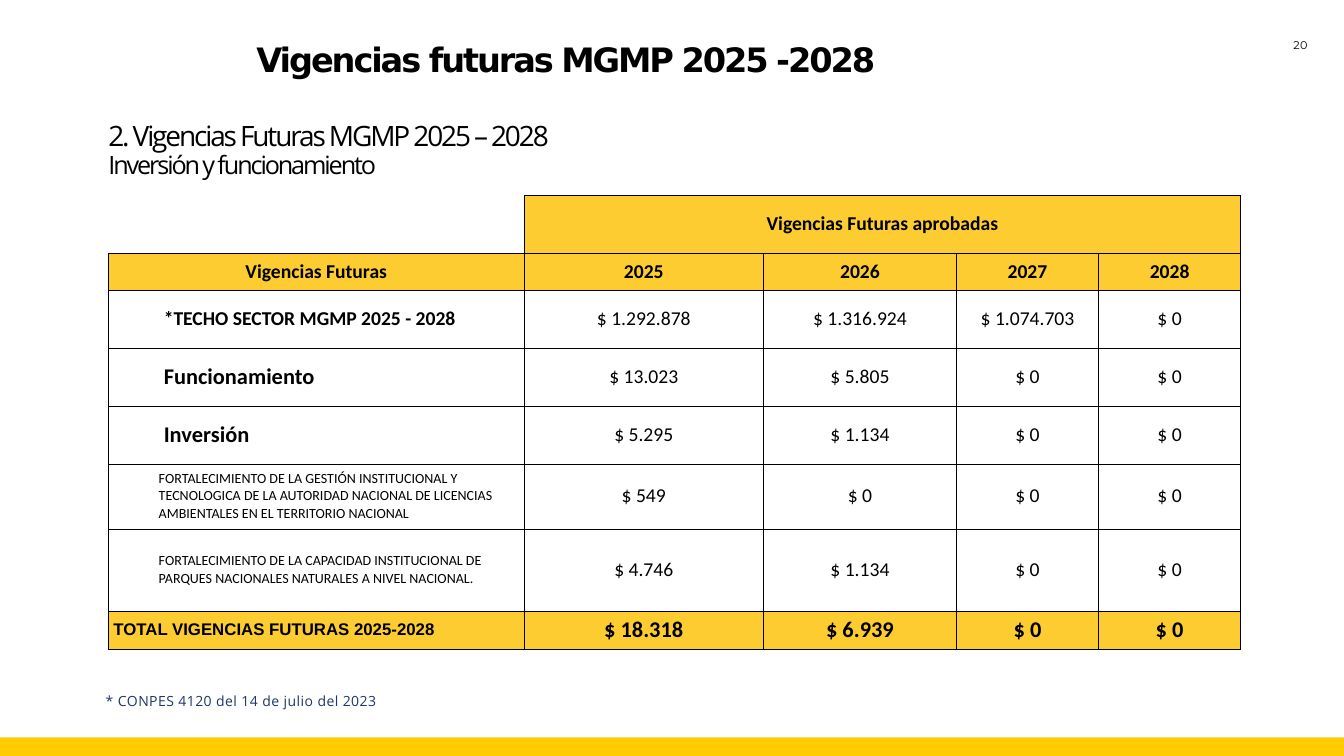
from dataclasses import dataclass

from lxml.etree import SubElement
from pptx import Presentation
from pptx.dml.color import RGBColor
from pptx.enum.shapes import MSO_SHAPE as Shape
from pptx.enum.text import MSO_ANCHOR as Anchor, MSO_AUTO_SIZE as AutoSize, PP_ALIGN as Align
from pptx.oxml.ns import qn
from pptx.util import Inches, Pt


@dataclass(frozen=True)
class Theme:
    black: str = "000000"
    navy: str = "203764"
    gold: str = "FCCC31"
    band: str = "FFCC01"
    heading_font: str = "DejaVu Sans"
    text_font: str = "Open Sans"
    number_font: str = "Montserrat"
    table_font: str = "Calibri"
    total_font: str = "Arial"
    heading: int = 48
    title: int = 40
    subtitle: int = 36
    strong: int = 32
    table: int = 28
    total: int = 24
    small: int = 20
    number: int = 16
    border: float = 0.5


class SlideBuilder:
    """Holds the theme and the current slide, and draws each kind of element."""

    def __init__(self, slide, theme):
        self.slide = slide
        self.theme = theme

    def style(self, font, name, size, color=None, bold=False):
        font.name, font.size, font.bold = name, Pt(size), bold
        font.color.rgb = RGBColor.from_string(color or self.theme.black)

    def space_letters(self, para, points):
        for run in para.runs:
            run.font._element.set("spc", str(round(points * 100)))

    def band(self, left, top, width, height, color):
        bar = self.slide.shapes.add_shape(
            Shape.RECTANGLE, Inches(left), Inches(top), Inches(width), Inches(height))
        bar.shadow.inherit = False
        bar.fill.solid()
        bar.fill.fore_color.rgb = RGBColor.from_string(color)
        bar.line.fill.background()

    def set_frame(self, frame, anchor=Anchor.TOP, margin=None):
        frame.word_wrap = True
        frame.auto_size = AutoSize.NONE
        frame.vertical_anchor = anchor
        if margin is not None:
            frame.margin_left = frame.margin_right = Inches(margin)
            frame.margin_top = frame.margin_bottom = Inches(margin)

    def text(self, place, words, font, size, color=None, bold=False, align=Align.LEFT,
             spacing=1.5, letters=0.6, anchor=Anchor.TOP, margin=None):
        box = self.slide.shapes.add_textbox(*map(Inches, place))
        self.set_frame(box.text_frame, anchor, margin)
        para = box.text_frame.paragraphs[0]
        para.text = words
        para.alignment, para.line_spacing = align, spacing
        self.style(para.font, font, size, color, bold)
        self.space_letters(para, letters)

    def title(self, place, first, second):
        theme, box = self.theme, self.slide.shapes.title
        box.left, box.top, box.width, box.height = map(Inches, place)
        self.set_frame(box.text_frame, margin=0)
        para = box.text_frame.paragraphs[0]
        para.alignment, para.line_spacing = Align.LEFT, 0.9
        self.style(para.font, theme.text_font, theme.title)
        para.add_run().text = first
        para.add_line_break()
        span = para.add_run()
        span.text = second
        span.font.size = Pt(theme.subtitle)
        self.space_letters(para, -3)

    def borders(self, cell, sides):
        properties = cell._tc.get_or_add_tcPr()
        for side in "LRTB":
            line = SubElement(properties, qn(f"a:ln{side}"), w=str(Pt(self.theme.border)))
            if side in sides:
                fill = SubElement(line, qn("a:solidFill"))
                SubElement(fill, qn("a:srgbClr"), val=self.theme.black)
            else:
                SubElement(line, qn("a:noFill"))

    def cell(self, cell, words, size, font=None, bold=False, indent=None,
             fill=None, sides="LRTB"):
        self.borders(cell, sides)
        if fill:
            cell.fill.solid()
            cell.fill.fore_color.rgb = RGBColor.from_string(fill)
        else:
            cell.fill.background()
        cell.margin_left = Inches(indent or 0)
        cell.margin_right = cell.margin_top = cell.margin_bottom = 0
        cell.vertical_anchor = Anchor.MIDDLE
        para = cell.text_frame.paragraphs[0]
        para.text = words
        para.alignment = Align.CENTER if indent is None else Align.LEFT
        self.style(para.font, font or self.theme.table_font, size, bold=bold)

    def table(self, left, top, widths, heights):
        frame = self.slide.shapes.add_table(
            len(heights), len(widths), Inches(left), Inches(top),
            Inches(sum(widths)), Inches(sum(heights)))
        grid = frame.table
        grid.first_row = grid.horz_banding = False
        for column, width in zip(grid.columns, widths):
            column.width = Inches(width)
        for row, height in zip(grid.rows, heights):
            row.height = Inches(height)
        return grid


def budget_table(builder):
    theme = builder.theme
    grid = builder.table(2.15, 3.87, [8.25, 4.75, 3.83, 2.82, 2.82],
                         [1.15, 0.73, 1.15, 1.15, 1.15, 1.29, 1.63, 0.76])

    # Two header rows, the first merged over the years
    header = {"size": theme.table, "bold": True, "fill": theme.gold}
    builder.cell(grid.cell(0, 0), "", theme.table, sides="RB")
    for column in range(1, 5):
        words = "Vigencias Futuras aprobadas" if column == 1 else ""
        builder.cell(grid.cell(0, column), words, **header)
    grid.cell(0, 1).merge(grid.cell(0, 4))
    for column, words in enumerate(["Vigencias Futuras", "2025", "2026", "2027", "2028"]):
        builder.cell(grid.cell(1, column), words, **header)

    # Label style and amount style for each kind of row
    amount = {"size": theme.table}
    ceiling = {"size": theme.table, "bold": True, "indent": 1.1}
    group = {**ceiling, "size": theme.strong}
    project = {"size": theme.small, "indent": 1}
    total = {"size": theme.total, "font": theme.total_font, "bold": True,
             "indent": 0.1, "fill": theme.gold}
    total_amount = {"size": theme.strong, "bold": True, "fill": theme.gold}
    rows = [
        ("*TECHO SECTOR MGMP 2025 - 2028", ceiling, amount,
         ["1.292.878", "1.316.924", "1.074.703", "0"]),
        ("Funcionamiento", group, amount, ["13.023", "5.805", "0", "0"]),
        ("Inversión", group, amount, ["5.295", "1.134", "0", "0"]),
        ("FORTALECIMIENTO DE LA GESTIÓN INSTITUCIONAL Y TECNOLOGICA DE LA AUTORIDAD "
         "NACIONAL DE LICENCIAS AMBIENTALES EN EL TERRITORIO NACIONAL",
         project, amount, ["549", "0", "0", "0"]),
        ("FORTALECIMIENTO DE LA CAPACIDAD INSTITUCIONAL DE PARQUES NACIONALES "
         "NATURALES A NIVEL NACIONAL.", project, amount, ["4.746", "1.134", "0", "0"]),
        ("TOTAL VIGENCIAS FUTURAS 2025-2028", total, total_amount,
         ["18.318", "6.939", "0", "0"]),
    ]
    for row, (label, label_style, amount_style, values) in enumerate(rows, start=2):
        builder.cell(grid.cell(row, 0), label, **label_style)
        for column, value in enumerate(values, start=1):
            builder.cell(grid.cell(row, column), f"$ {value}", **amount_style)


def main():
    deck = Presentation()
    deck.slide_width, deck.slide_height = Inches(26.67), Inches(15)
    theme = Theme()
    builder = SlideBuilder(deck.slides.add_slide(deck.slide_layouts[5]), theme)

    # Bottom band and page number
    builder.band(0, 14.63, 26.67, 0.37, theme.band)
    builder.text((25.41, 0.59, 0.79, 0.46), "20", theme.number_font, theme.number,
                 align=Align.CENTER, anchor=Anchor.MIDDLE)

    # Headings
    builder.title((2.15, 2.43, 25.4, 0.7),
                  "2. Vigencias Futuras MGMP 2025 – 2028", "Inversión y funcionamiento")
    builder.text((4.53, 0.86, 13.4, 3.4), "Vigencias futuras MGMP 2025 -2028",
                 theme.heading_font, theme.heading, bold=True, align=Align.CENTER,
                 spacing=0.9, letters=-3, margin=0)

    # Table and its footnote
    budget_table(builder)
    builder.text((2, 13.53, 13.78, 0.61), "* CONPES 4120 del 14 de julio del 2023",
                 theme.text_font, theme.small, theme.navy)

    deck.save("out.pptx")


if __name__ == "__main__":
    main()
